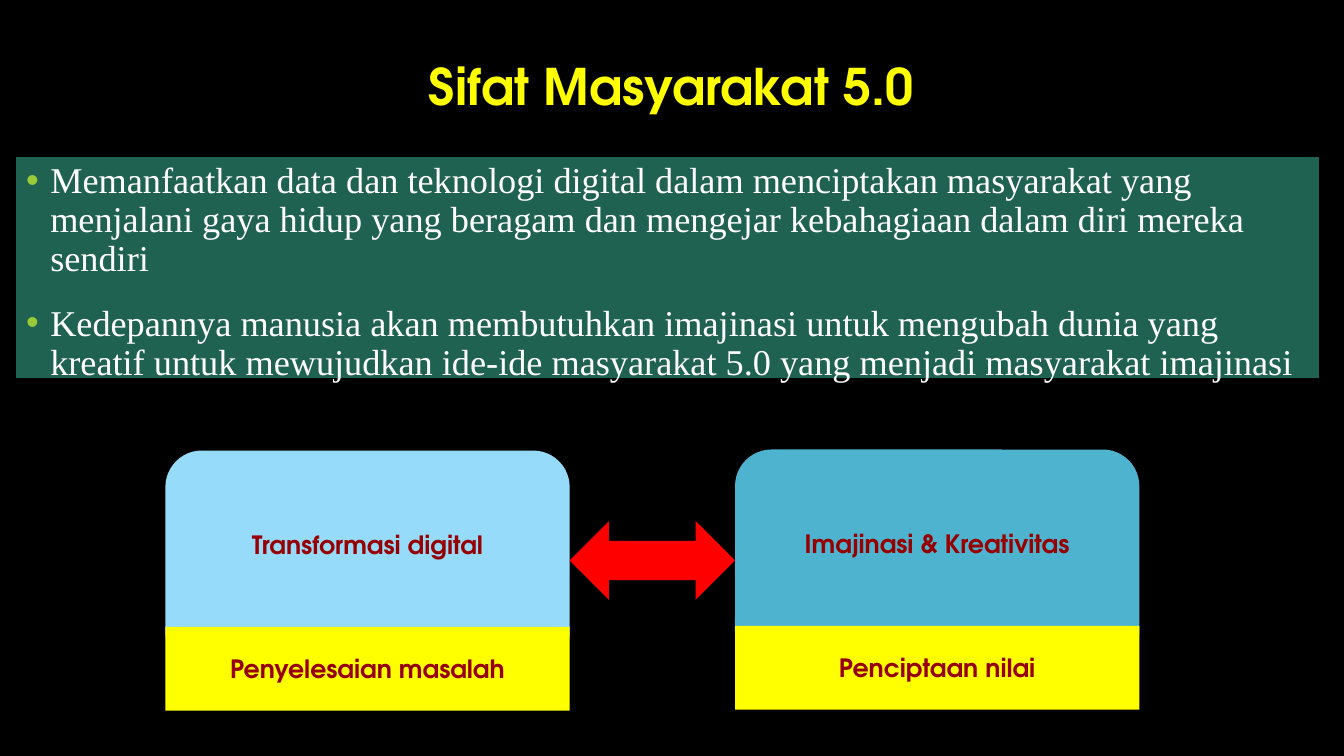
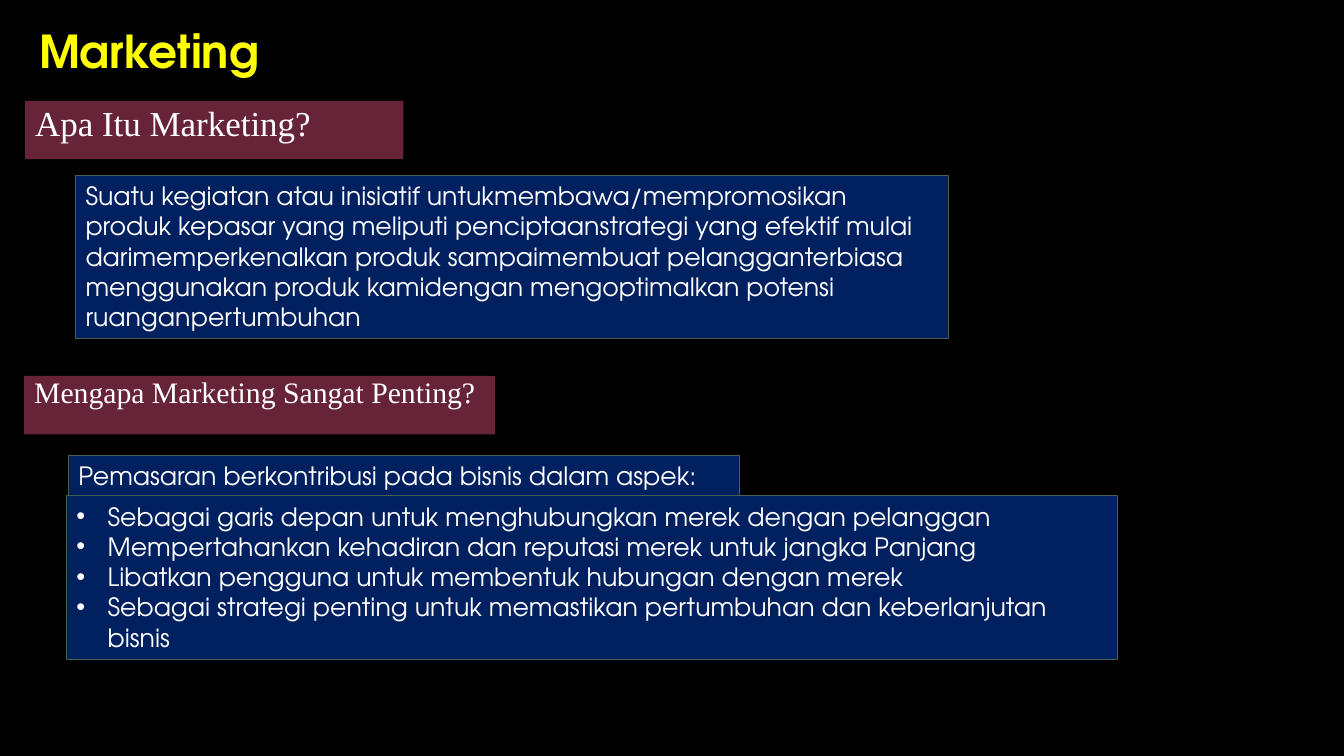
from lxml import etree
from pptx import Presentation
from pptx.dml.color import RGBColor
from pptx.enum.shapes import MSO_SHAPE
from pptx.enum.text import MSO_ANCHOR, PP_ALIGN
from pptx.oxml.ns import qn
from pptx.util import Inches, Pt

RECTANGLE = MSO_SHAPE.RECTANGLE
ROUNDED = MSO_SHAPE.ROUNDED_RECTANGLE
DOUBLE_ARROW = MSO_SHAPE.LEFT_RIGHT_ARROW
TOP, MIDDLE, BOTTOM = MSO_ANCHOR.TOP, MSO_ANCHOR.MIDDLE, MSO_ANCHOR.BOTTOM
LEFT, CENTER = PP_ALIGN.LEFT, PP_ALIGN.CENTER

SANS, SERIF = "TeX Gyre Adventor", "Times New Roman"
BLACK, WHITE, YELLOW, RED = "000000", "FFFFFF", "FFFF00", "FF0000"
DARK_RED, GREEN, LIME = "960000", "206252", "99CB38"
SKY, TEAL = "97DBFB", "4EB3CF"
MAROON, NAVY, NAVY_EDGE = "672338", "002060", "455F51"


def color(value):
    return RGBColor.from_string(value)


def add_bullet(para, indent, tint=None):
    """Give the paragraph a hanging bullet, optionally in its own colour."""
    properties = para._p.get_or_add_pPr()
    properties.set("marL", str(Inches(indent)))
    properties.set("indent", str(-Inches(indent)))
    if tint:
        bullet_color = etree.SubElement(properties, qn("a:buClr"))
        etree.SubElement(bullet_color, qn("a:srgbClr")).set("val", tint)
    etree.SubElement(properties, qn("a:buFont")).set("typeface", "Arial")
    etree.SubElement(properties, qn("a:buChar")).set("char", "•")


def write(box, *texts, size=18, font=SANS, tint=WHITE, bold=False, align=LEFT,
          anchor=TOP, line_spacing=None, gap=0, indent=0, bullet_tint=None):
    """Write one paragraph per text; gap is the space between them in points."""
    frame = box.text_frame
    frame.word_wrap = True
    frame.vertical_anchor = anchor
    for index, text in enumerate(texts):
        para = frame.add_paragraph() if index else frame.paragraphs[0]
        para.alignment = align
        if line_spacing:
            para.line_spacing = line_spacing
        para.space_before = Pt(gap if index else 0)
        if indent:
            add_bullet(para, indent, bullet_tint)
        span = para.add_run()
        span.text = text
        span.font.size = Pt(size)
        span.font.name = font
        span.font.bold = bold
        span.font.color.rgb = color(tint)


class Deck:
    """Holds the shared style and the slide being filled."""

    def __init__(self):
        self.file = Presentation()
        self.file.slide_width = Inches(13.33)
        self.file.slide_height = Inches(7.5)
        self.page = None

    def add_page(self):
        self.page = self.file.slides.add_slide(self.file.slide_layouts[6])
        self.page.background.fill.solid()
        self.page.background.fill.fore_color.rgb = color(BLACK)

    def title(self, text, left, top, height, **style):
        box = self.page.shapes.add_textbox(
            Inches(left), Inches(top), Inches(10), Inches(height))
        write(box, text, tint=YELLOW, bold=True, anchor=BOTTOM,
              line_spacing=0.9, **style)

    def shape(self, kind, left, top, width, height, fill, edge=None):
        shape = self.page.shapes.add_shape(
            kind, Inches(left), Inches(top), Inches(width), Inches(height))
        shape.shadow.inherit = False
        shape.fill.solid()
        shape.fill.fore_color.rgb = color(fill)
        if edge:
            shape.line.color.rgb = color(edge)
            shape.line.width = Pt(0.75)
        else:
            shape.line.fill.background()
        return shape

    def panel(self, left, top, width, height, *texts, fill=NAVY, edge=None, **style):
        write(self.shape(RECTANGLE, left, top, width, height, fill, edge),
              *texts, **style)

    def heading(self, text, left, top, width, **style):
        self.panel(left, top, width, 0.58, text, fill=MAROON, font=SERIF, **style)

    def note(self, left, top, width, height, *texts, **style):
        self.panel(left, top, width, height, *texts, edge=NAVY_EDGE, **style)

    def card(self, left, top, fill, topic, outcome):
        """A rounded card with a yellow label over its lower edge."""
        label = dict(tint=DARK_RED, bold=True, align=CENTER, anchor=MIDDLE)
        body = self.shape(ROUNDED, left, top, 4.01, 2.17, fill)
        body.text_frame.margin_bottom = Inches(0.35)
        write(body, topic, **label)
        self.panel(left, top + 1.75, 4.01, 0.83, outcome, fill=YELLOW, **label)


def build_society(deck):
    deck.add_page()
    deck.title("Sifat Masyarakat 5.0", 1.66, 0.2, 1, size=36, align=CENTER)
    deck.panel(
        0.16, 1.56, 12.92, 2.19,
        "Memanfaatkan data dan teknologi digital dalam menciptakan masyarakat yang "
        "menjalani gaya hidup yang beragam dan mengejar kebahagiaan dalam diri "
        "mereka sendiri",
        "Kedepannya manusia akan membutuhkan imajinasi untuk mengubah dunia yang "
        "kreatif untuk mewujudkan ide-ide masyarakat 5.0 yang menjadi masyarakat "
        "imajinasi",
        fill=GREEN, size=25.9, font=SERIF, line_spacing=0.9, gap=18,
        indent=0.24, bullet_tint=LIME)
    deck.card(1.64, 4.47, SKY, "Transformasi digital", "Penyelesaian masalah")
    deck.card(7.29, 4.46, TEAL, "Imajinasi & Kreativitas", "Penciptaan nilai")
    deck.shape(DOUBLE_ARROW, 5.65, 5.17, 1.64, 0.78, RED)


def build_marketing(deck):
    deck.add_page()
    deck.title("Marketing", 0.29, 0.25, 0.58, size=32.4)
    deck.heading("Apa Itu Marketing?", 0.25, 1, 3.75, size=25, line_spacing=0.9)
    deck.note(
        0.75, 1.74, 8.66, 1.62,
        "Suatu kegiatan atau inisiatif untukmembawa/mempromosikan produk kepasar "
        "yang meliputi penciptaanstrategi yang efektif mulai darimemperkenalkan "
        "produk sampaimembuat pelangganterbiasa menggunakan produk kamidengan "
        "mengoptimalkan potensi ruanganpertumbuhan")
    deck.heading("Mengapa Marketing Sangat Penting?", 0.24, 3.73, 4.67,
                 size=21.2, line_spacing=0.8)
    deck.note(0.68, 4.52, 6.66, 0.4,
              "Pemasaran berkontribusi pada bisnis dalam aspek:")
    deck.note(
        0.66, 4.92, 10.42, 1.62,
        "Sebagai garis depan untuk menghubungkan merek dengan pelanggan",
        "Mempertahankan kehadiran dan reputasi merek untuk jangka Panjang",
        "Libatkan pengguna untuk membentuk hubungan dengan merek",
        "Sebagai strategi penting untuk memastikan pertumbuhan dan keberlanjutan "
        "bisnis",
        indent=0.31)


def main():
    deck = Deck()
    build_society(deck)
    build_marketing(deck)
    deck.file.save("out.pptx")


if __name__ == "__main__":
    main()
